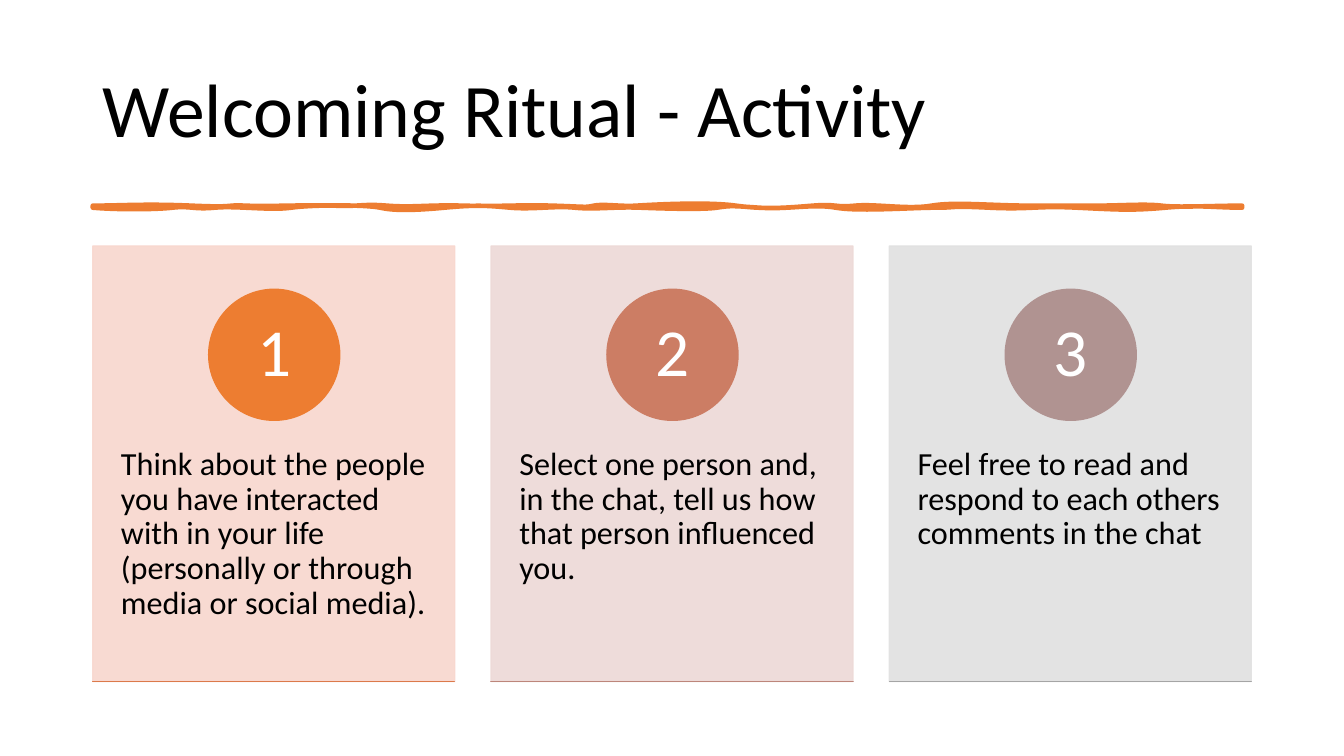
from dataclasses import dataclass

from lxml.etree import SubElement
from pptx import Presentation
from pptx.dml.color import RGBColor
from pptx.enum.shapes import MSO_SHAPE as SHAPE
from pptx.enum.text import MSO_ANCHOR as ANCHOR, PP_ALIGN as ALIGN
from pptx.oxml.ns import qn
from pptx.util import Emu, Pt

EMU_PER_PX = 9144  # 100 px to the inch
FONT = "Calibri"
COLORS = {"text": "000000", "number": "FFFFFF", "stroke": "ED7D31"}

LEFT, CARD_TOP = 92, 244
CARD_WIDTH, CARD_HEIGHT, CARD_PITCH = 359, 432, 395
STEP_TOP, STEP_HEIGHT = 408, 259
CIRCLE_INDENT, CIRCLE_TOP, CIRCLE_SIZE = 115, 287, 130
NUMBER_INSET = 19
HAIRLINE = Emu(72)
STROKE_TOP, STROKE_BOTTOM, STROKE_RIGHT = 204, 206, 1232


@dataclass(frozen=True)
class Step:
    text: str
    card: str
    circle: str
    base: str


STEPS = [
    Step("Think about the people you have interacted with in your life "
         "(personally or through media or social media).", "F8D7CE", "ED7D31", "DC7A4B"),
    Step("Select one person and, in the chat, tell us how that person influenced you.",
         "EDD9D7", "CC7D64", "BD867B"),
    Step("Feel free to read and respond to each others comments in the chat",
         "E1E1E1", "B09391", "A5A5A5"),
]

# Each wave of the brush stroke: two control points, then the x where it ends
TOP_WAVES = [
    (119, 204, 144, 202, 190), (237, 206, 220, 203, 244), (267, 205, 303, 203, 331),
    (360, 205, 359, 202, 384), (410, 206, 423, 203, 460), (498, 205, 514, 203, 548),
    (581, 205, 581, 206, 589), (598, 202, 615, 205, 631), (647, 203, 701, 200, 730),
    (759, 208, 781, 206, 806), (831, 202, 827, 206, 848), (868, 202, 901, 208, 924),
    (947, 200, 982, 204, 1023), (1063, 204, 1063, 204, 1087), (1112, 204, 1136, 202, 1152),
    (1168, 206, 1203, 204, 1232),
]
BOTTOM_WAVES = [
    (1205, 206, 1189, 203, 1156), (1122, 209, 1110, 208, 1068), (1027, 204, 1023, 208, 981),
    (939, 204, 952, 206, 928), (904, 206, 851, 210, 829), (806, 202, 782, 208, 753),
    (724, 204, 725, 204, 711), (698, 208, 661, 207, 635), (609, 205, 590, 208, 570),
    (551, 204, 528, 208, 506), (483, 204, 473, 203, 441), (409, 209, 390, 209, 377),
    (363, 203, 310, 203, 289), (268, 209, 235, 204, 213), (192, 208, 189, 204, 171),
    (154, 208, 114, 208, 92),
]


def px(value: int) -> Emu:
    return Emu(value * EMU_PER_PX)


def rgb(color: str) -> RGBColor:
    return RGBColor.from_string(color)


def paint(shape, color: str, width: float = 1) -> None:
    shape.shadow.inherit = False
    shape.fill.solid()
    shape.fill.fore_color.rgb = rgb(color)
    shape.line.color.rgb = rgb(color)
    shape.line.width = Pt(width)


def write(shape, text: str, size: int, color: str, inset: tuple[int, int],
          anchor=ANCHOR.TOP, align=ALIGN.LEFT) -> None:
    frame = shape.text_frame
    frame.word_wrap = True
    frame.vertical_anchor = anchor
    frame.margin_left = frame.margin_right = px(inset[0])
    frame.margin_top = frame.margin_bottom = px(inset[1])
    frame.text = text
    paragraph = frame.paragraphs[0]
    paragraph.alignment = align
    paragraph.line_spacing = 0.9
    font = paragraph.runs[0].font
    font.name, font.size, font.color.rgb = FONT, Pt(size), rgb(color)


def draw_stroke(shapes) -> None:
    builder = shapes.build_freeform(px(LEFT), px(STROKE_TOP))
    ends = [(wave[-1], STROKE_TOP) for wave in TOP_WAVES]
    ends.append((STROKE_RIGHT, STROKE_BOTTOM))
    ends += [(wave[-1], STROKE_BOTTOM) for wave in BOTTOM_WAVES]
    builder.add_line_segments([(px(x), px(y)) for x, y in ends])
    stroke = builder.convert_to_shape()
    paint(stroke, COLORS["stroke"], 3.25)

    # Bend the straight edges into curves; the right end stays straight
    edges = list(stroke._element.iter(qn("a:lnTo")))
    for edge, wave in zip(edges, [*TOP_WAVES, None, *BOTTOM_WAVES]):
        if wave is None:
            continue
        x1, y1, x2, y2, _ = wave
        edge.tag = qn("a:cubicBezTo")
        for position, (x, y) in enumerate([(x1, y1), (x2, y2)]):
            control = SubElement(edge, qn("a:pt"), x=str(px(x - LEFT)),
                                 y=str(px(y - STROKE_TOP)))
            edge.insert(position, control)


def draw_step(shapes, index: int, step: Step) -> None:
    left = LEFT + index * CARD_PITCH
    card = shapes.add_shape(SHAPE.RECTANGLE, px(left), px(CARD_TOP),
                            px(CARD_WIDTH), px(CARD_HEIGHT))
    paint(card, step.card)
    for color in card._element.spPr.iter(qn("a:srgbClr")):
        SubElement(color, qn("a:alpha"), val="90000")

    instruction = shapes.add_textbox(px(left), px(STEP_TOP), px(CARD_WIDTH), px(STEP_HEIGHT))
    write(instruction, step.text, 23, COLORS["text"], (28, 36))

    circle_left = left + CIRCLE_INDENT
    circle = shapes.add_shape(SHAPE.OVAL, px(circle_left), px(CIRCLE_TOP),
                              px(CIRCLE_SIZE), px(CIRCLE_SIZE))
    paint(circle, step.circle)

    number_size = px(CIRCLE_SIZE - 2 * NUMBER_INSET)
    number = shapes.add_textbox(px(circle_left + NUMBER_INSET), px(CIRCLE_TOP + NUMBER_INSET),
                                number_size, number_size)
    write(number, str(index + 1), 48, COLORS["number"], (10, 1), ANCHOR.MIDDLE, ALIGN.CENTER)

    base = shapes.add_shape(SHAPE.RECTANGLE, px(left), px(CARD_TOP + CARD_HEIGHT),
                            px(CARD_WIDTH), HAIRLINE)
    paint(base, step.base)


def main() -> None:
    deck = Presentation()
    deck.slide_width, deck.slide_height = px(1333), px(750)
    shapes = deck.slides.add_slide(deck.slide_layouts[6]).shapes

    # Title and brush stroke
    title = shapes.add_textbox(px(LEFT), px(40), px(1150), px(145))
    write(title, "Welcoming Ritual - Activity", 54, COLORS["text"], (10, 5), ANCHOR.MIDDLE)
    draw_stroke(shapes)

    # Numbered cards
    for index, step in enumerate(STEPS):
        draw_step(shapes, index, step)

    deck.save("out.pptx")


if __name__ == "__main__":
    main()
